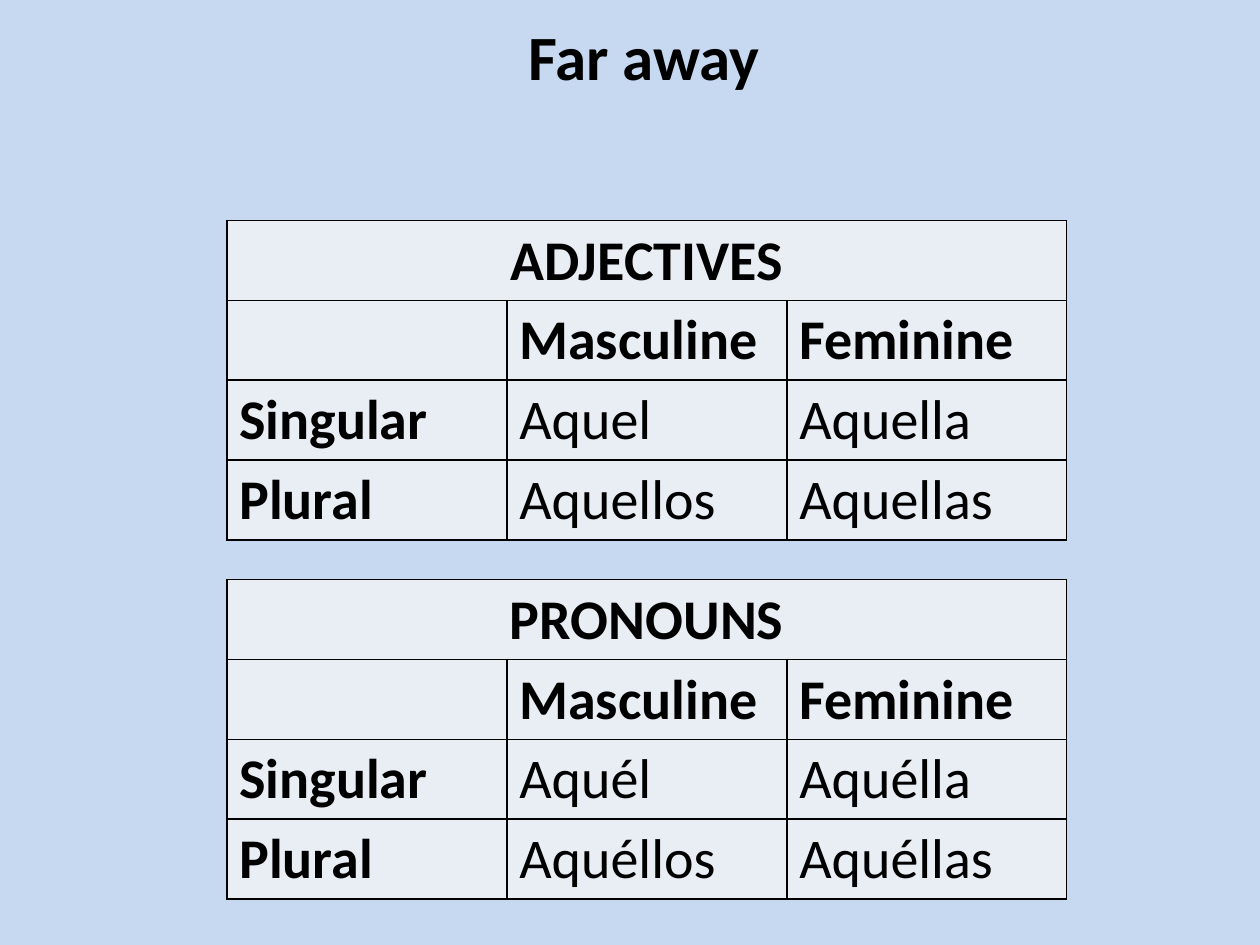
import pptx
import pptx.util
import pptx.dml.color
import pptx.enum.text
import pptx.oxml
import pptx.oxml.ns

Pt = pptx.util.Pt
RGB = pptx.dml.color.RGBColor.from_string
ALIGN = pptx.enum.text.PP_ALIGN
COLORS = {"back": "C6D9F1", "cell": "E9EDF4", "ink": "000000"}


def style(par, size, bold):
    for run in par.runs:
        run.font.name = "Calibri"
        run.font.size = Pt(size)
        run.font.bold = bold
        run.font.color.rgb = RGB(COLORS["ink"])


def border(cell):
    props = cell._tc.get_or_add_tcPr()
    for i, side in enumerate(("lnL", "lnR", "lnT", "lnB")):
        line = pptx.oxml.parse_xml(
            f'<a:{side} {pptx.oxml.ns.nsdecls("a")} w="12700"><a:solidFill>'
            f'<a:srgbClr val="{COLORS["ink"]}"/></a:solidFill></a:{side}>')
        props.insert(i, line)


deck = pptx.Presentation()
deck.slide_width, deck.slide_height = Pt(720), Pt(540)
slide = deck.slides.add_slide(deck.slide_layouts[6])
slide.background.fill.solid()
slide.background.fill.fore_color.rgb = RGB(COLORS["back"])

# Title
title = slide.shapes.add_textbox(Pt(15.84), Pt(6.5), Pt(704.16), Pt(120))
title.text_frame.word_wrap = True
title.text_frame.text = "Far away"
par = title.text_frame.paragraphs[0]
par.alignment = ALIGN.CENTER
par.space_before = Pt(7.2)
style(par, 36, True)

# Tables: heading, column names, then one row per number
tables = [
    (126, "ADJECTIVES", ("Aquel", "Aquella"), ("Aquellos", "Aquellas")),
    (331.2, "PRONOUNS", ("Aquél", "Aquélla"), ("Aquéllos", "Aquéllas")),
]
for top, head, single, plural in tables:
    rows = [(head, "", ""), ("", "Masculine", "Feminine"),
            ("Singular", *single), ("Plural", *plural)]
    frame = slide.shapes.add_table(4, 3, Pt(129.6), Pt(top), Pt(480), Pt(182.4))
    table = frame.table
    table.first_row = table.horz_banding = False
    table.cell(0, 0).merge(table.cell(0, 2))
    for r, words in enumerate(rows):
        for c, word in enumerate(words):
            cell = table.cell(r, c)
            cell.fill.solid()
            cell.fill.fore_color.rgb = RGB(COLORS["cell"])
            border(cell)
            if word:
                cell.text_frame.text = word
                par = cell.text_frame.paragraphs[0]
                par.alignment = ALIGN.CENTER if r == 0 else ALIGN.LEFT
                style(par, 32, r < 2 or c == 0)

deck.save("out.pptx")
